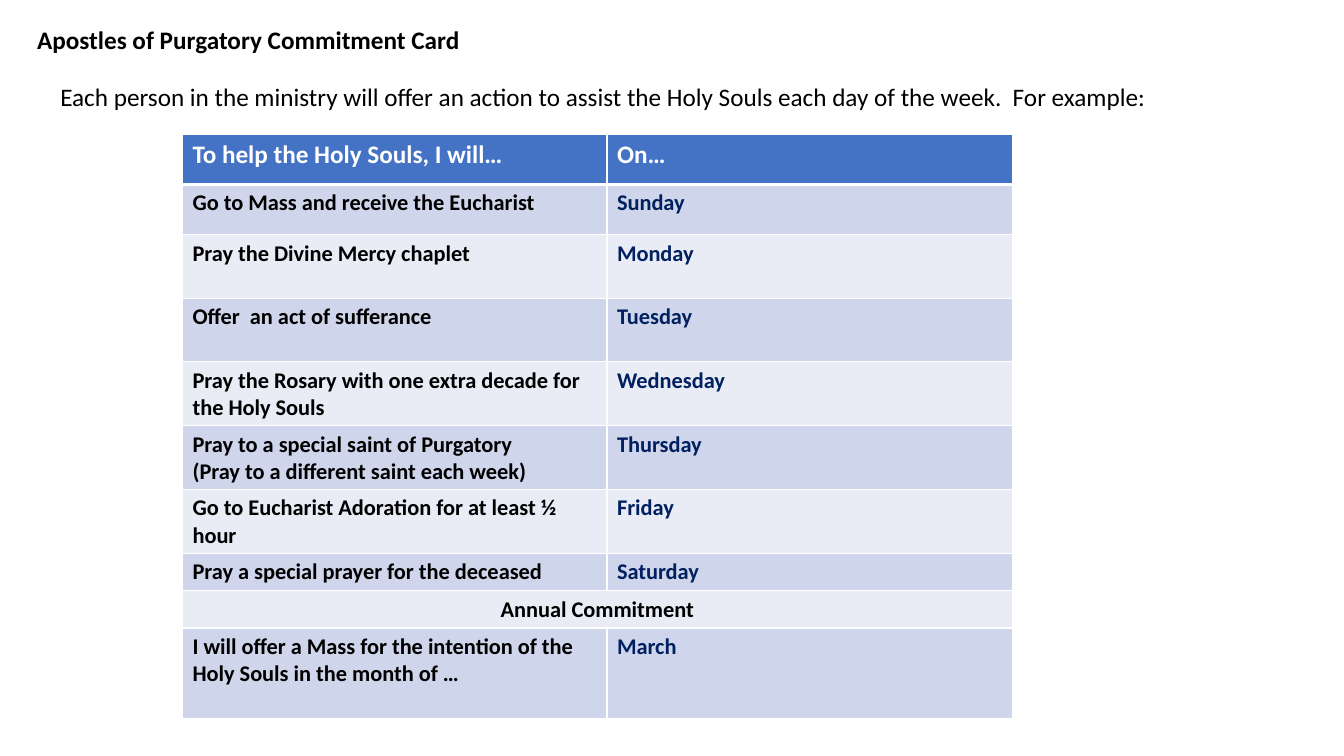
from lxml.etree import SubElement
from pptx import Presentation
from pptx.dml.color import RGBColor
from pptx.enum.text import PP_ALIGN
from pptx.oxml.ns import qn
from pptx.util import Inches, Pt

BLACK = RGBColor(0x00, 0x00, 0x00)
WHITE = RGBColor(0xFF, 0xFF, 0xFF)
NAVY = RGBColor(0x00, 0x20, 0x60)
HEADER_BLUE = RGBColor(0x44, 0x72, 0xC4)
DARK_BAND = RGBColor(0xCF, 0xD5, 0xEA)
LIGHT_BAND = RGBColor(0xE9, 0xEB, 0xF5)

# Row height in inches, action, day or month
ROWS = [
    (0.5, "To help the Holy Souls, I will…", "On…"),
    (0.5, "Go to Mass and receive the Eucharist", "Sunday"),
    (0.63, "Pray the Divine Mercy chaplet", "Monday"),
    (0.63, "Offer  an act of sufferance", "Tuesday"),
    (0.63, "Pray the Rosary with one extra decade for the Holy Souls", "Wednesday"),
    (0.63, "Pray to a special saint of Purgatory\n(Pray to a different saint each week)", "Thursday"),
    (0.63, "Go to Eucharist Adoration for at least ½ hour", "Friday"),
    (0.37, "Pray a special prayer for the deceased", "Saturday"),
    (0.37, "Annual Commitment", ""),
    (0.9, "I will offer a Mass for the intention of the Holy Souls in the month of …", "March"),
]
ANNUAL_ROW = 8


def format_text(text_frame, size, color, bold):
    for paragraph in text_frame.paragraphs:
        for run in paragraph.runs:
            run.font.name = "Calibri"
            run.font.size = Pt(size)
            run.font.bold = bold
            run.font.color.rgb = color


def add_border(cell, side, width):
    line = SubElement(cell._tc.get_or_add_tcPr(), qn(f"a:{side}"), w=str(Pt(width)))
    fill = SubElement(line, qn("a:solidFill"))
    SubElement(fill, qn("a:srgbClr"), val=str(WHITE))


presentation = Presentation()
presentation.slide_width = Inches(13.33)
presentation.slide_height = Inches(7.5)
slide = presentation.slides.add_slide(presentation.slide_layouts[6])

# Title and introduction
for left, top, width, text, bold in [
    (0.27, 0.19, 4.43, "Apostles of Purgatory Commitment Card", True),
    (0.5, 0.76, 11.16, "Each person in the ministry will offer an action to assist "
     "the Holy Souls each day of the week.  For example:", False),
]:
    text_box = slide.shapes.add_textbox(Inches(left), Inches(top), Inches(width), Inches(0.4))
    text_box.text_frame.word_wrap = False
    text_box.text_frame.text = text
    format_text(text_box.text_frame, 18, BLACK, bold)

# Commitment table
table_height = sum(height for height, _, _ in ROWS)
table = slide.shapes.add_table(
    len(ROWS), 2, Inches(1.81), Inches(1.33), Inches(8.23), Inches(table_height)).table
table.columns[0].width = Inches(4.21)
table.columns[1].width = Inches(4.02)

for row_index, (height, *texts) in enumerate(ROWS):
    table.rows[row_index].height = Inches(height)
    is_header = row_index == 0
    band = HEADER_BLUE if is_header else DARK_BAND if row_index % 2 else LIGHT_BAND
    for column_index, text in enumerate(texts):
        cell = table.cell(row_index, column_index)
        cell.text_frame.text = text
        color = WHITE if is_header else NAVY if column_index else BLACK
        format_text(cell.text_frame, 18 if is_header else 16, color, True)
        # The line under the header is thicker
        add_border(cell, "lnL", 1)
        add_border(cell, "lnR", 1)
        add_border(cell, "lnT", 3 if row_index == 1 else 1)
        add_border(cell, "lnB", 3 if is_header else 1)
        cell.fill.solid()
        cell.fill.fore_color.rgb = band

# Annual commitment heading across both columns
annual_cell = table.cell(ANNUAL_ROW, 0)
annual_cell.merge(table.cell(ANNUAL_ROW, 1))
annual_cell.text_frame.paragraphs[0].alignment = PP_ALIGN.CENTER

presentation.save("out.pptx")
